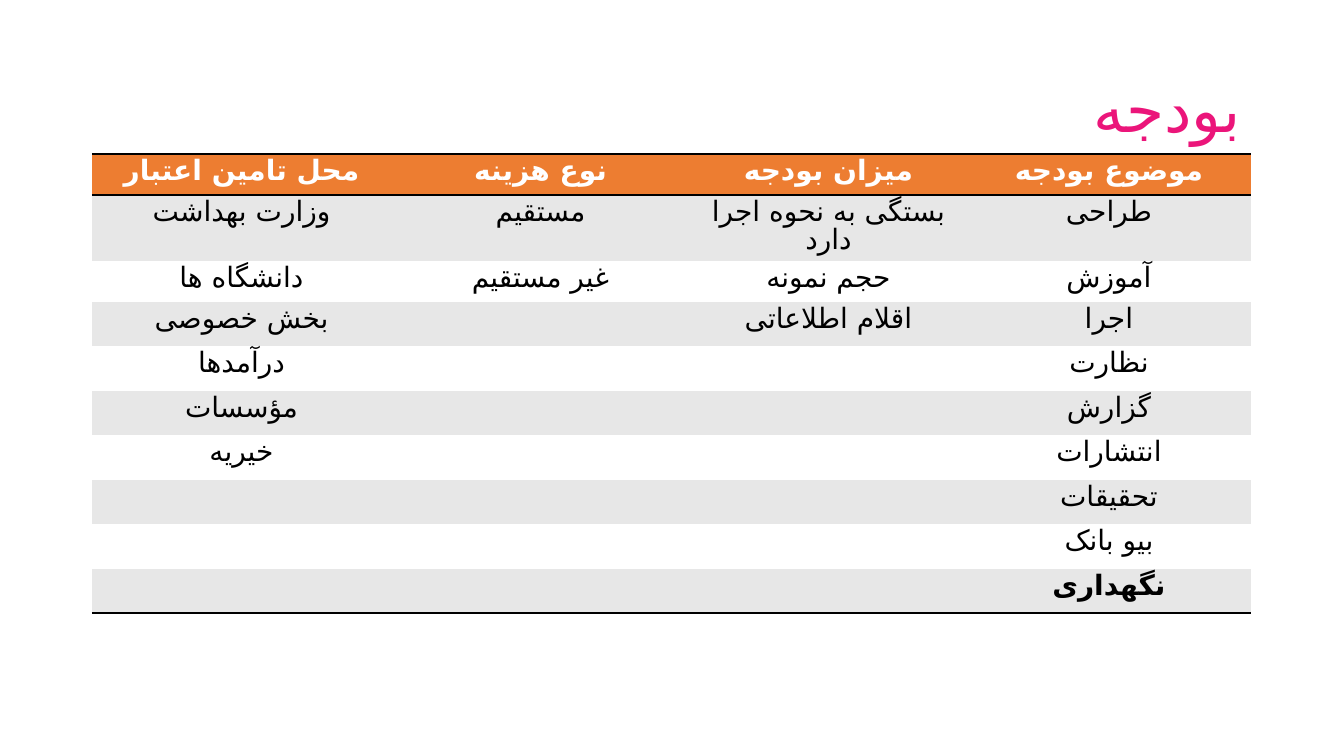
from lxml import etree
from pptx import Presentation
from pptx import util as u
from pptx.dml.color import RGBColor
from pptx.enum import text
from pptx.oxml.ns import qn

PX = u.Inches(1) / 100.8
COLORS = {
    "title": "EB157A",
    "header": "ED7D31",
    "band": "E7E7E7",
    "white": "FFFFFF",
    "black": "000000",
}
NO_STYLE = "{2D5ABB26-0587-4C30-8999-92F81FD0307C}"
PERSIAN_FONT = "DejaVu Sans"

COL_WIDTHS = [299, 299, 277, 284]
ROW_HEIGHTS = [41, 66, 41] + [44, 45] * 3 + [44]
BUDGET = [
    ["محل تامین اعتبار", "نوع هزینه", "میزان بودجه", "موضوع بودجه"],
    ["وزارت بهداشت", "مستقیم", "بستگی به نحوه اجرا دارد", "طراحی"],
    ["دانشگاه ها", "غیر مستقیم", "حجم نمونه", "آموزش"],
    ["بخش خصوصی", "", "اقلام اطلاعاتی", "اجرا"],
    ["درآمدها", "", "", "نظارت"],
    ["مؤسسات", "", "", "گزارش"],
    ["خیریه", "", "", "انتشارات"],
    ["", "", "", "تحقیقات"],
    ["", "", "", "بیو بانک"],
    ["", "", "", "نگهداری"],
]


def px(n):
    return u.Emu(round(n * PX))


def rgb(name):
    return RGBColor.from_string(COLORS[name])


def write(tf, words, *, size, font, color, align, spacing, bold=False):
    """Fill a text frame with one right-to-left paragraph."""
    p = tf.paragraphs[0]
    p.alignment = align
    p.line_spacing = spacing
    p._p.get_or_add_pPr().set("rtl", "1")
    r = p.add_run()
    r.text = words
    r.font.size = u.Pt(size)
    r.font.name = font
    r.font.bold = bold
    r.font.color.rgb = rgb(color)
    cs = etree.SubElement(r._r.get_or_add_rPr(), qn("a:cs"))
    cs.set("typeface", PERSIAN_FONT)


def add_borders(cell, sides):
    """Draw black 2 pt rules on the given sides, in schema order."""
    tcPr = cell._tc.get_or_add_tcPr()
    for i, side in enumerate(sides):
        ln = etree.Element(qn(f"a:ln{side}"), w=str(u.Pt(2)))
        fill = etree.SubElement(ln, qn("a:solidFill"))
        etree.SubElement(fill, qn("a:srgbClr"), val=COLORS["black"])
        tcPr.insert(i, ln)


def add_title(slide, words):
    sp = slide.shapes.title
    sp.left, sp.top, sp.width, sp.height = px(92), px(40), px(1159), px(146)
    sp.text_frame.vertical_anchor = text.MSO_ANCHOR.MIDDLE
    write(sp.text_frame, words, size=44, font="TeX Gyre Schola",
          color="title", align=text.PP_ALIGN.RIGHT, spacing=0.9)


def add_budget_table(slide):
    frame = slide.shapes.add_table(
        len(BUDGET), len(COL_WIDTHS), px(92), px(154),
        px(sum(COL_WIDTHS)), px(sum(ROW_HEIGHTS)))
    table = frame.table
    table._tbl.tblPr.find(qn("a:tableStyleId")).text = NO_STYLE
    for column, width in zip(table.columns, COL_WIDTHS):
        column.width = px(width)
    for row, height in zip(table.rows, ROW_HEIGHTS):
        row.height = px(height)

    last = len(BUDGET) - 1
    for i, entries in enumerate(BUDGET):
        header = i == 0
        fill = "header" if header else "band" if i % 2 else "white"
        for j, words in enumerate(entries):
            cell = table.cell(i, j)
            cell.fill.solid()
            cell.fill.fore_color.rgb = rgb(fill)
            add_borders(cell, "TB" if header else "B" if i == last else "")
            if words:
                write(cell.text_frame, words, size=20, font="Calibri",
                      color="white" if header else "black",
                      align=text.PP_ALIGN.CENTER, spacing=u.Pt(20),
                      bold=i in (0, last))


def main():
    prs = Presentation()
    prs.slide_width, prs.slide_height = px(1344), px(756)
    slide = prs.slides.add_slide(prs.slide_layouts[5])
    add_title(slide, "بودجه")
    add_budget_table(slide)
    prs.save("out.pptx")


if __name__ == "__main__":
    main()
